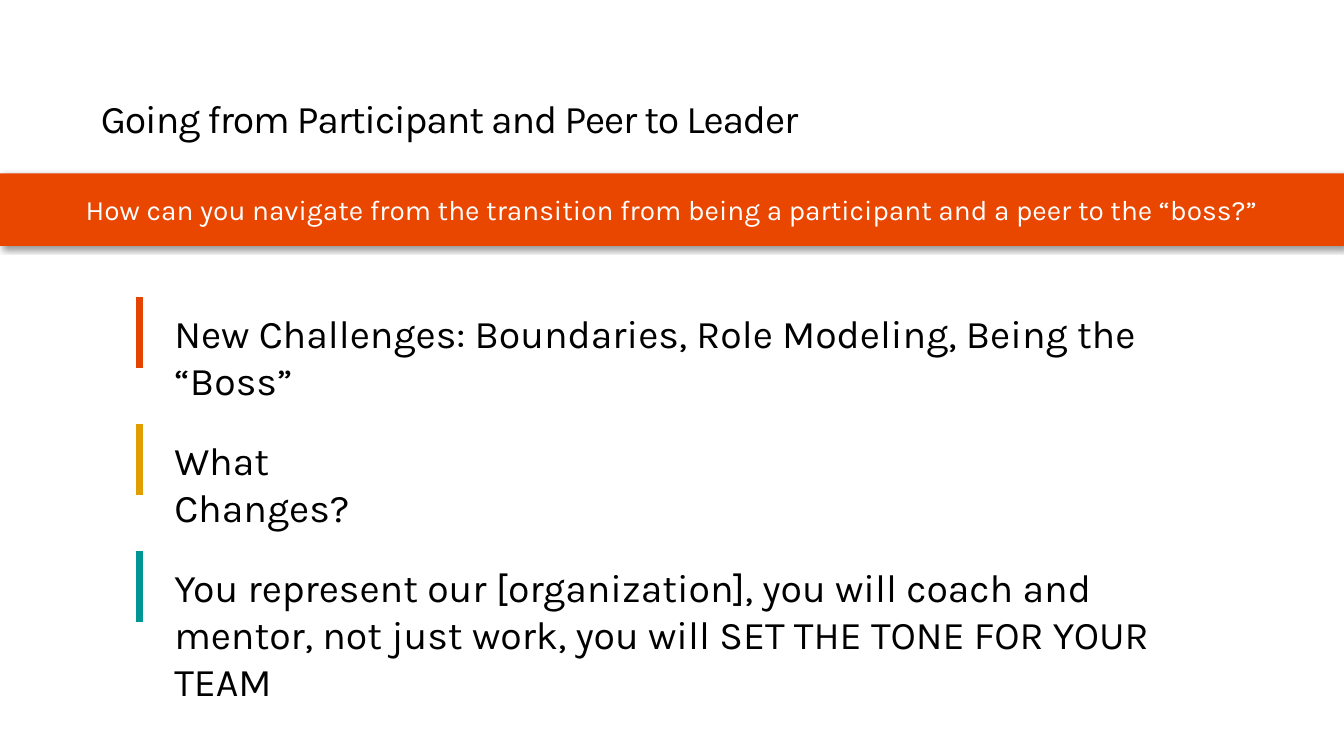
import pptx
import pptx.dml.color
import pptx.enum.shapes
import pptx.enum.text
import pptx.oxml
import pptx.oxml.ns
import pptx.util
from pptx.util import Inches

FONT = "Karla"
BLACK = "000000"
ORANGE = "E94600"
ROW_PITCH = 1.26
POINTS = [
    ("New Challenges: Boundaries, Role Modeling, Being the “Boss”", "E44400", 10.39, 0.57),
    ("What Changes?", "E19E00", 2.89, 0.57),
    ("You represent our [organization], you will coach and mentor, "
     "not just work, you will SET THE TONE FOR YOUR TEAM", "009693", 10.32, 1.04),
]


def color(value):
    """Return the colour for a hex string."""
    return pptx.dml.color.RGBColor.from_string(value)


def write(frame, text, size, text_color, alignment):
    """Fill a text frame with one formatted paragraph and return it."""
    frame.word_wrap = True
    frame.text = text
    paragraph = frame.paragraphs[0]
    paragraph.alignment = alignment
    paragraph.font.name = FONT
    paragraph.font.size = pptx.util.Pt(size)
    paragraph.font.color.rgb = color(text_color)
    return paragraph


def add_effects(shape, content=""):
    """Append an effect list, empty unless content is given."""
    namespace = pptx.oxml.ns.nsdecls("a")
    effects = pptx.oxml.parse_xml(f"<a:effectLst {namespace}>{content}</a:effectLst>")
    shape._element.spPr.append(effects)


def format_title(slide, text):
    """Place and format the title placeholder."""
    title = slide.shapes.title
    title.left, title.top = Inches(1), Inches(0.76)
    title.width, title.height = Inches(11.33), Inches(0.65)
    frame = title.text_frame
    frame.auto_size = pptx.enum.text.MSO_AUTO_SIZE.NONE
    frame.vertical_anchor = pptx.enum.text.MSO_ANCHOR.BOTTOM
    frame.margin_left = frame.margin_right = frame.margin_bottom = 0
    frame.margin_top = Inches(0.05)
    paragraph = write(frame, text, 28, BLACK, pptx.enum.text.PP_ALIGN.LEFT)
    paragraph.line_spacing = 0.9
    paragraph.runs[0].font._element.set("spc", "-80")


def add_banner(slide, text):
    """Add the full-width question banner with its soft shadow."""
    banner = slide.shapes.add_shape(
        pptx.enum.shapes.MSO_SHAPE.RECTANGLE, 0, Inches(1.72), Inches(13.33), Inches(0.72))
    banner.fill.solid()
    banner.fill.fore_color.rgb = color(ORANGE)
    banner.line.fill.background()
    add_effects(banner, (
        '<a:outerShdw blurRad="50800" dist="38100" dir="2700000" algn="tl" rotWithShape="0">'
        '<a:srgbClr val="000000"><a:alpha val="40000"/></a:srgbClr></a:outerShdw>'))
    banner.text_frame.vertical_anchor = pptx.enum.text.MSO_ANCHOR.MIDDLE
    write(banner.text_frame, text, 20, "FFFFFF", pptx.enum.text.PP_ALIGN.CENTER)


def add_point(slide, top, text, bar_color, width, height):
    """Add a group of one statement and its coloured bar."""
    group = slide.shapes.add_group_shape()
    box = group.shapes.add_textbox(
        Inches(1.63), Inches(top + 0.07), Inches(width), Inches(height))
    write(box.text_frame, text, 28, BLACK, pptx.enum.text.PP_ALIGN.LEFT)
    box.text_frame.auto_size = pptx.enum.text.MSO_AUTO_SIZE.SHAPE_TO_FIT_TEXT
    bar = group.shapes.add_connector(
        pptx.enum.shapes.MSO_CONNECTOR.STRAIGHT,
        Inches(1.38), Inches(top), Inches(1.38), Inches(top + 0.7))
    bar.line.color.rgb = color(bar_color)
    bar.line.width = pptx.util.Pt(5)
    add_effects(bar)


def main():
    """Build the slide and save it."""
    presentation = pptx.Presentation()
    presentation.slide_width = Inches(13.33)
    presentation.slide_height = Inches(7.5)
    slide = presentation.slides.add_slide(presentation.slide_layouts.get_by_name("Title Only"))
    format_title(slide, "Going from Participant and Peer to Leader")
    add_banner(slide, "How can you navigate from the transition from being "
                      "a participant and a peer to the “boss?”")
    for row, point in enumerate(POINTS):
        add_point(slide, 2.95 + row * ROW_PITCH, *point)
    presentation.save("out.pptx")


if __name__ == "__main__":
    main()
